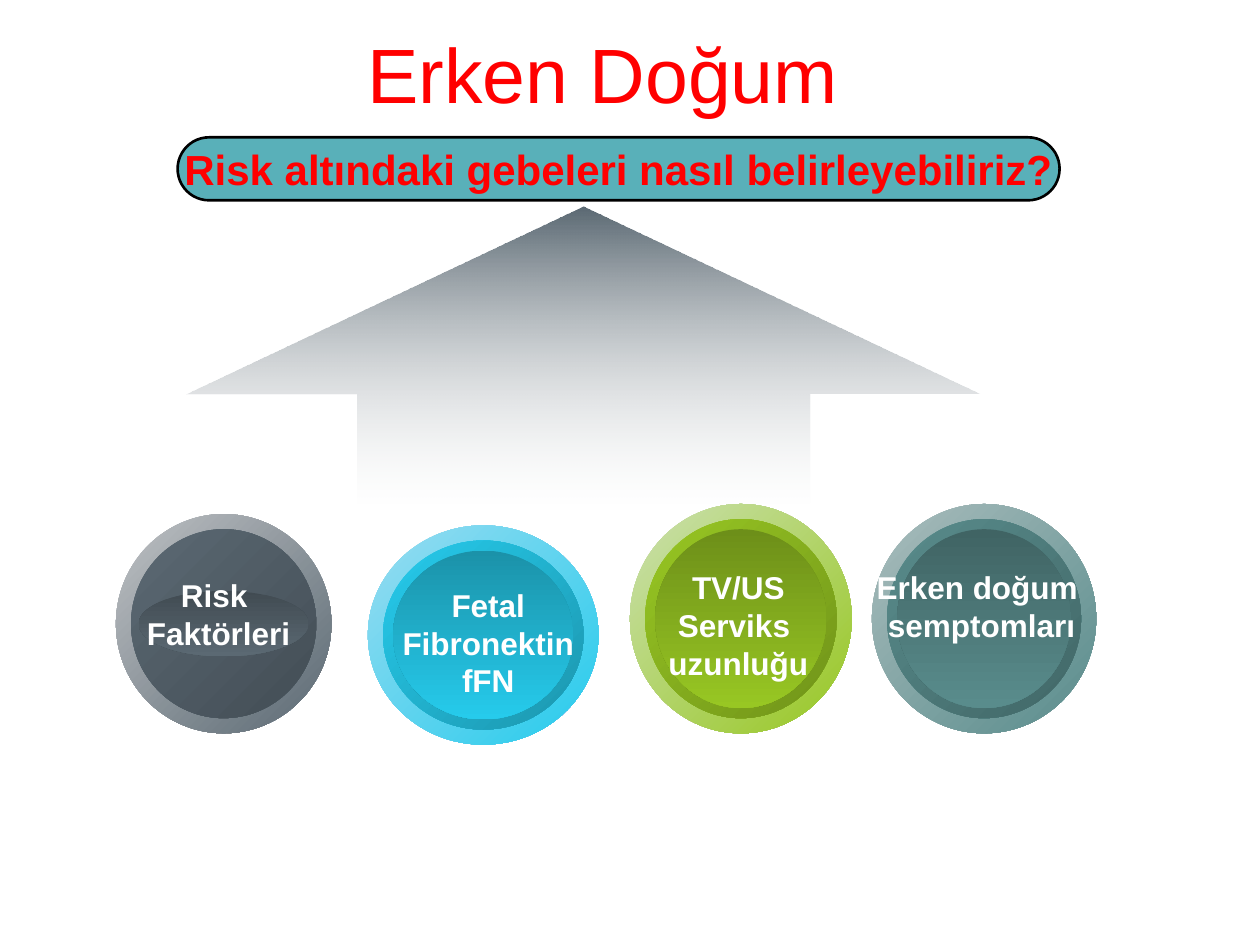
"""Build the slide on identifying pregnancies at risk of preterm birth."""
import pptx
import pptx.dml.color
import pptx.enum.shapes
import pptx.enum.text
import pptx.oxml.ns
import pptx.util
from lxml import etree

Inches = pptx.util.Inches
SHAPE = pptx.enum.shapes.MSO_SHAPE
ANCHOR = pptx.enum.text.MSO_ANCHOR

COLOURS = {
    "red": "FF0000",
    "white": "FFFFFF",
    "black": "000000",
    "banner": "59B0B9",
    "mist": "DADCDD",
    "slate": "5B6973",
    "cyan": "26CBEC",
    "green": "98C723",
    "teal": "598C8C",
}

RING_INSET = (0.12, 0.12)
CORE_INSET = (0.2, 0.2)
OVAL_INSET = (0.18, 0.61)

FACTORS = [
    ("Risk \nFaktörleri", "slate", 0.54, OVAL_INSET,
     (0.92, 4.08, 1.71, 1.74), (1.06, 4.52, 1.35, 0.71), False),
    ("Fetal\nFibronektin\nfFN", "cyan", 0.7, CORE_INSET,
     (2.92, 4.17, 1.83, 1.74), (3.08, 4.6, 1.59, 1.01), True),
    ("TV/US\nServiks \nuzunluğu", "green", 0.58, CORE_INSET,
     (5, 4, 1.76, 1.82), (5.2, 4.46, 1.32, 1.01), False),
    ("Erken doğum \nsemptomları", "teal", 0.66, CORE_INSET,
     (6.92, 4, 1.78, 1.82), (6.85, 4.46, 1.88, 0.71), False),
]


def rgb(name):
    """Return the named colour."""
    return pptx.dml.color.RGBColor.from_string(COLOURS[name])


def shrink(bounds, inset):
    """Return bounds moved inwards by a horizontal and a vertical inset."""
    left, top, width, height = bounds
    across, down = inset
    return left + across, top + down, width - 2 * across, height - 2 * down


class SlideBuilder:
    """Hold the text style and the current slide."""

    font = "Arial"

    def __init__(self, slide):
        """Start on the given slide."""
        self.slide = slide

    def set_text(self, frame, wording, size, colour, bold=False, wrap=True):
        """Put centred, formatted wording in a text frame."""
        frame.text = wording
        frame.word_wrap = wrap
        for paragraph in frame.paragraphs:
            paragraph.alignment = pptx.enum.text.PP_ALIGN.CENTER
            for run in paragraph.runs:
                run.font.name = self.font
                run.font.size = pptx.util.Pt(size)
                run.font.bold = bold
                run.font.color.rgb = rgb(colour)

    def title(self, wording, bounds):
        """Fill and place the title placeholder."""
        heading = self.slide.shapes.title
        heading.left, heading.top, heading.width, heading.height = map(Inches, bounds)
        self.set_text(heading.text_frame, wording, 44, "red")
        heading.text_frame.vertical_anchor = ANCHOR.TOP

    def shape(self, parent, preset, bounds, adjustments=()):
        """Add a preset shape without shadow or line."""
        drawn = parent.add_shape(preset, *map(Inches, bounds))
        drawn.shadow.inherit = False
        drawn.line.fill.background()
        for index, value in enumerate(adjustments):
            drawn.adjustments[index] = value
        return drawn

    def gradient(self, drawn, angle, *stops):
        """Fill with two stops of colour, modifier and share, clockwise angle."""
        drawn.fill.gradient()
        drawn.fill.gradient_angle = (360 - angle) % 360
        for stop, (colour, _, _) in zip(drawn.fill.gradient_stops, stops):
            stop.color.rgb = rgb(colour)
        nodes = list(drawn.element.iter(pptx.oxml.ns.qn("a:srgbClr")))
        for node, (_, modifier, share) in zip(nodes, stops):
            if modifier:
                tag = pptx.oxml.ns.qn(f"a:{modifier}")
                etree.SubElement(node, tag, val=str(round(share * 100000)))

    def banner(self, wording, bounds):
        """Add the outlined question banner."""
        question = self.shape(self.slide.shapes, SHAPE.ROUNDED_RECTANGLE, bounds, [0.5])
        question.fill.solid()
        question.fill.fore_color.rgb = rgb("banner")
        question.line.color.rgb = rgb("black")
        question.line.width = pptx.util.Pt(1.5)
        self.set_text(question.text_frame, wording, 24, "red", bold=True, wrap=False)
        question.text_frame.vertical_anchor = ANCHOR.MIDDLE

    def arrow(self, bounds):
        """Add the fading arrow that points up to the banner."""
        pointer = self.shape(self.slide.shapes, SHAPE.UP_ARROW, bounds, [0.57, 0.63])
        self.gradient(pointer, 90, ("slate", None, 0), ("mist", "alpha", 0))

    def factor(self, wording, colour, tint, inset, disc, label, wrap):
        """Add one grouped button of rim, ring, core and label."""
        parts = self.slide.shapes.add_group_shape().shapes
        plain = (colour, None, 0)
        layers = [
            (disc, 45, (colour, "tint", tint), plain),
            (shrink(disc, RING_INSET), 45, plain, (colour, "shade", 0.5)),
            (shrink(disc, inset), 90, (colour, "shade", 0.47), plain),
        ]
        for bounds, angle, start, end in layers:
            self.gradient(self.shape(parts, SHAPE.OVAL, bounds), angle, start, end)
        caption = parts.add_textbox(*map(Inches, label)).text_frame
        self.set_text(caption, wording, 18, "white", bold=True, wrap=wrap)
        caption.auto_size = pptx.enum.text.MSO_AUTO_SIZE.SHAPE_TO_FIT_TEXT


def main():
    """Build and save the presentation."""
    deck = pptx.Presentation()
    deck.slide_width, deck.slide_height = Inches(10), Inches(7.5)
    builder = SlideBuilder(deck.slides.add_slide(deck.slide_layouts[5]))
    builder.title("Erken Doğum", (1.41, 0.16, 6.75, 0.83))
    builder.banner("Risk altındaki gebeleri nasıl belirleyebiliriz?", (1.41, 1.09, 7, 0.5))
    builder.arrow((1.48, 1.64, 6.3, 2.36))
    for factor in FACTORS:
        builder.factor(*factor)
    deck.save("out.pptx")


if __name__ == "__main__":
    main()
